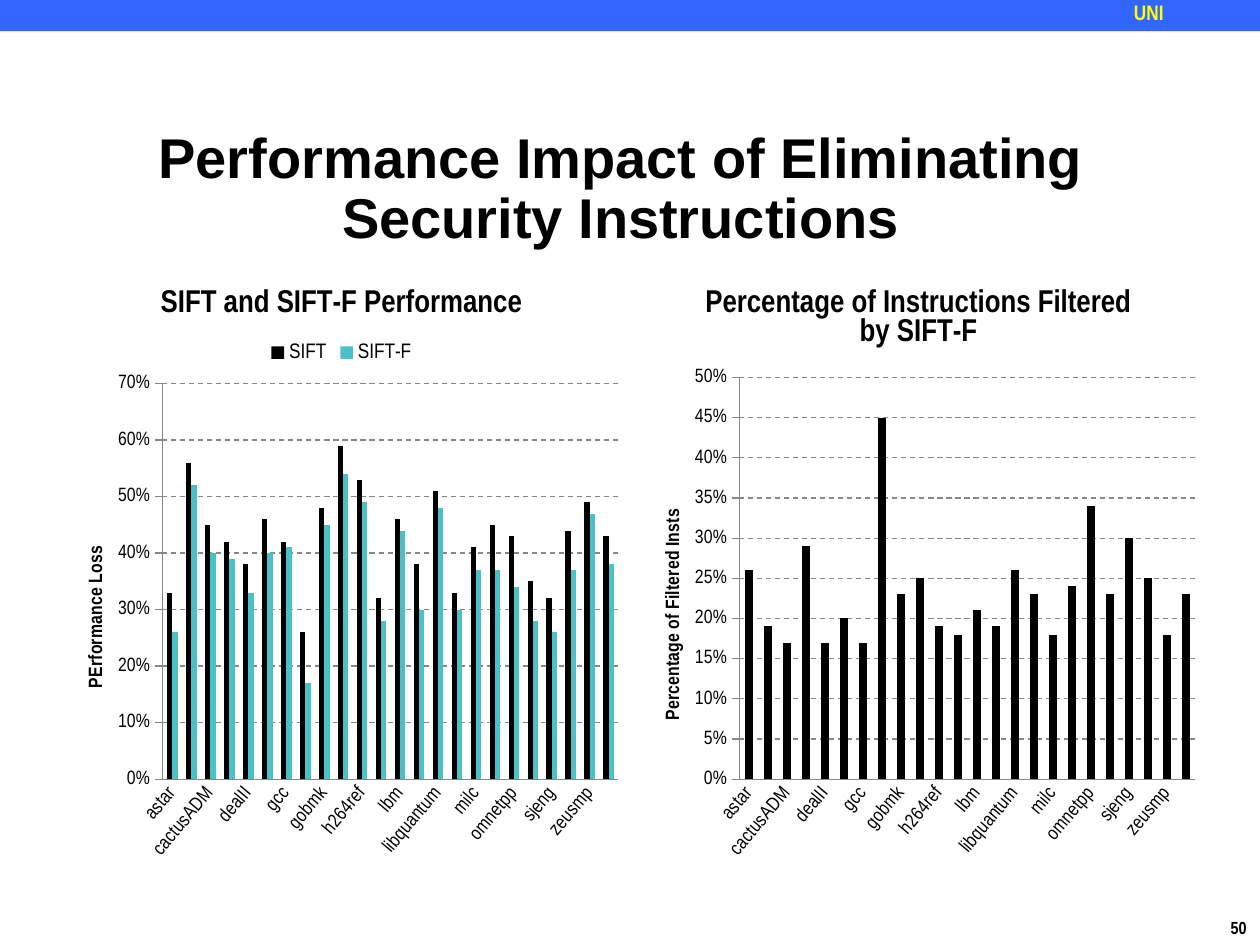
from lxml import etree
from pptx import Presentation, util as u
from pptx.chart import data as chart_data
from pptx.dml import color
from pptx.enum import chart as ce, dml, shapes, text
from pptx.oxml import ns

BLACK, BLUE, TEAL, YELLOW, GREY = "000000", "3366FF", "4BC0C6", "FFFF00", "878787"
NARROW = "Arial Narrow"
BENCHMARKS = (
    "astar bzip2 cactusADM calculix dealII gamess gcc GemsFDTD gobmk gromacs h264ref hmmer "
    "lbm leslie3d libquantum mcf milc namd omnetpp povray sjeng sphinx3 zeusmp avg"
).split()
PERFORMANCE = {
    "title": "SIFT and SIFT-F Performance",
    "axis_title": "PErformance Loss",
    "series": [
        ("SIFT", BLACK, [0.33, 0.56, 0.45, 0.42, 0.38, 0.46, 0.42, 0.26, 0.48, 0.59, 0.53, 0.32,
                         0.46, 0.38, 0.51, 0.33, 0.41, 0.45, 0.43, 0.35, 0.32, 0.44, 0.49, 0.43]),
        ("SIFT-F", TEAL, [0.26, 0.52, 0.4, 0.39, 0.33, 0.4, 0.41, 0.17, 0.45, 0.54, 0.49, 0.28,
                          0.44, 0.3, 0.48, 0.3, 0.37, 0.37, 0.34, 0.28, 0.26, 0.37, 0.47, 0.38]),
    ],
    "scale": {"minimum_scale": 0, "maximum_scale": 0.7, "major_unit": 0.1},
    "plot_layout": {"x": 0.19, "y": 0.2, "w": 0.79, "h": 0.65},
    "title_layout": {"x": 0.05, "y": 0.46},
}
FILTERED = {
    "title": "Percentage of Instructions Filtered by SIFT-F",
    "axis_title": "Percentage of Filtered Insts",
    "series": [
        ("Series 1", BLACK, [0.26, 0.19, 0.17, 0.29, 0.17, 0.2, 0.17, 0.45, 0.23, 0.25, 0.19, 0.18,
                             0.21, 0.19, 0.26, 0.23, 0.18, 0.24, 0.34, 0.23, 0.3, 0.25, 0.18, 0.23]),
    ],
    "scale": {"minimum_scale": 0, "maximum_scale": 0.5, "major_unit": 0.05},
    "plot_layout": {"x": 0.19, "y": 0.19, "w": 0.79, "h": 0.66},
    "title_layout": {"x": 0.05, "y": 0.4},
}


def rgb(value):
    """Return the colour for a hex string."""
    return color.RGBColor.from_string(value)


def apply(target, values):
    """Set each named attribute of the target."""
    for name, value in values.items():
        setattr(target, name, value)


def style_font(font, size, bold=False, name=NARROW, fill=BLACK):
    """Set size, weight, face and colour of a font."""
    apply(font, {"size": u.Pt(size), "bold": bold, "name": name})
    font.color.rgb = rgb(fill)


def style_line(line, dash=None):
    """Give a chart line its grey stroke."""
    line.color.rgb = rgb(GREY)
    apply(line, {"width": u.Pt(0.75), "dash_style": dash})


def add_text(slide, box, wording, font, frame_format, paragraph_format):
    """Place one paragraph of text in a box."""
    frame = slide.shapes.add_textbox(*map(u.Cm, box)).text_frame
    apply(frame, frame_format)
    paragraph = frame.paragraphs[0]
    apply(paragraph, paragraph_format)
    run = paragraph.add_run()
    run.text = wording
    style_font(run.font, **font)


def add_header(slide, box):
    """Draw the blue band with its label."""
    left, top, width, height = box
    band = slide.shapes.add_shape(shapes.MSO_SHAPE.RECTANGLE, *map(u.Cm, box))
    band.shadow.inherit = False
    band.fill.solid()
    band.fill.fore_color.rgb = rgb(BLUE)
    band.line.fill.background()
    margins = dict.fromkeys(("margin_left", "margin_top", "margin_right", "margin_bottom"), 0)
    add_text(slide, (left + 0.9 * width, top, 0.1 * width, 0.9 * height), "UNI",
             {"size": 12, "bold": True, "fill": YELLOW}, {"word_wrap": True, **margins}, {})


def add_title(slide, box):
    """Write the slide heading."""
    add_text(slide, box, "Performance Impact of Eliminating Security Instructions",
             {"size": 32, "bold": True, "name": "Arial"}, {"word_wrap": True},
             {"alignment": text.PP_ALIGN.CENTER, "line_spacing": 0.9})


def add_page_number(slide, box):
    """Write the page number."""
    add_text(slide, box, "50", {"size": 10, "bold": True}, {"word_wrap": False}, {})


def set_layout(parent, index, values, target=None):
    """Fix the position of a chart part as fractions of the chart."""
    for old in parent.findall(ns.qn("c:layout")):
        parent.remove(old)
    layout = etree.Element(ns.qn("c:layout"))
    manual = etree.SubElement(layout, ns.qn("c:manualLayout"))
    if target:
        etree.SubElement(manual, ns.qn("c:layoutTarget")).set("val", target)
    for mode in ("xMode", "yMode"):
        etree.SubElement(manual, ns.qn(f"c:{mode}")).set("val", "edge")
    for name, value in values.items():
        etree.SubElement(manual, ns.qn(f"c:{name}")).set("val", str(value))
    parent.insert(index, layout)


def write_title(title, wording, size):
    """Write a bold chart or axis title."""
    title.text_frame.text = wording
    style_font(title.text_frame.paragraphs[0].runs[0].font, size, bold=True)


def style_axes(chart, details):
    """Format both axes, the gridlines and the axis title."""
    marks = ce.XL_TICK_MARK
    for axis, mark in ((chart.category_axis, marks.NONE), (chart.value_axis, marks.OUTSIDE)):
        apply(axis, {"major_tick_mark": mark, "minor_tick_mark": marks.NONE})
        style_font(axis.tick_labels.font, 11)
        style_line(axis.format.line)
    names = chart.category_axis.tick_labels.font._element.getroottree().find(
        f".//{ns.qn('c:catAx')}/{ns.qn('c:txPr')}/{ns.qn('a:bodyPr')}")
    names.set("rot", "-3000000")
    values = chart.value_axis
    apply(values, {"has_major_gridlines": True, "has_title": True, **details["scale"]})
    apply(values.tick_labels, {"number_format": "0%", "number_format_is_linked": False})
    style_line(values.major_gridlines.format.line, dml.MSO_LINE.DASH)
    write_title(values.axis_title, details["axis_title"], 11)
    set_layout(values.axis_title._element, 1, details["title_layout"])


def add_benchmark_chart(slide, box, details):
    """Draw one column chart over all benchmarks."""
    data = chart_data.CategoryChartData(number_format="0%")
    data.categories = BENCHMARKS
    for name, _, values in details["series"]:
        data.add_series(name, values)
    chart = slide.shapes.add_chart(
        ce.XL_CHART_TYPE.COLUMN_CLUSTERED, *map(u.Cm, box), data).chart
    style_font(chart.font, 10)
    apply(chart, {"has_title": True, "has_legend": len(details["series"]) > 1})
    write_title(chart.chart_title, details["title"], 18)
    if chart.has_legend:
        apply(chart.legend, {"position": ce.XL_LEGEND_POSITION.TOP, "include_in_layout": False})
        style_font(chart.legend.font, 12)
    plot = chart.plots[0]
    apply(plot, {"gap_width": 150, "overlap": 0, "vary_by_categories": False})
    for series, (_, fill, _) in zip(plot.series, details["series"]):
        series.format.fill.solid()
        series.format.fill.fore_color.rgb = rgb(fill)
    style_axes(chart, details)
    set_layout(chart._chartSpace.chart.plotArea, 0, details["plot_layout"], "inner")


def main():
    """Build the slide and save it."""
    presentation = Presentation()
    apply(presentation, {"slide_width": u.Cm(25.4), "slide_height": u.Cm(19.05)})
    slide = presentation.slides.add_slide(presentation.slide_layouts[6])
    add_page_number(slide, (24.56, 18.36, 0.86, 0.69))
    add_header(slide, (0, 0, 25.4, 0.63))
    width = 11.63
    for column, details in enumerate((PERFORMANCE, FILTERED)):
        add_benchmark_chart(slide, (1.07 + column * width, 5.28, width, 12.27), details)
    add_title(slide, (2.54, 2.49, 19.96, 1.7))
    presentation.save("out.pptx")


if __name__ == "__main__":
    main()
